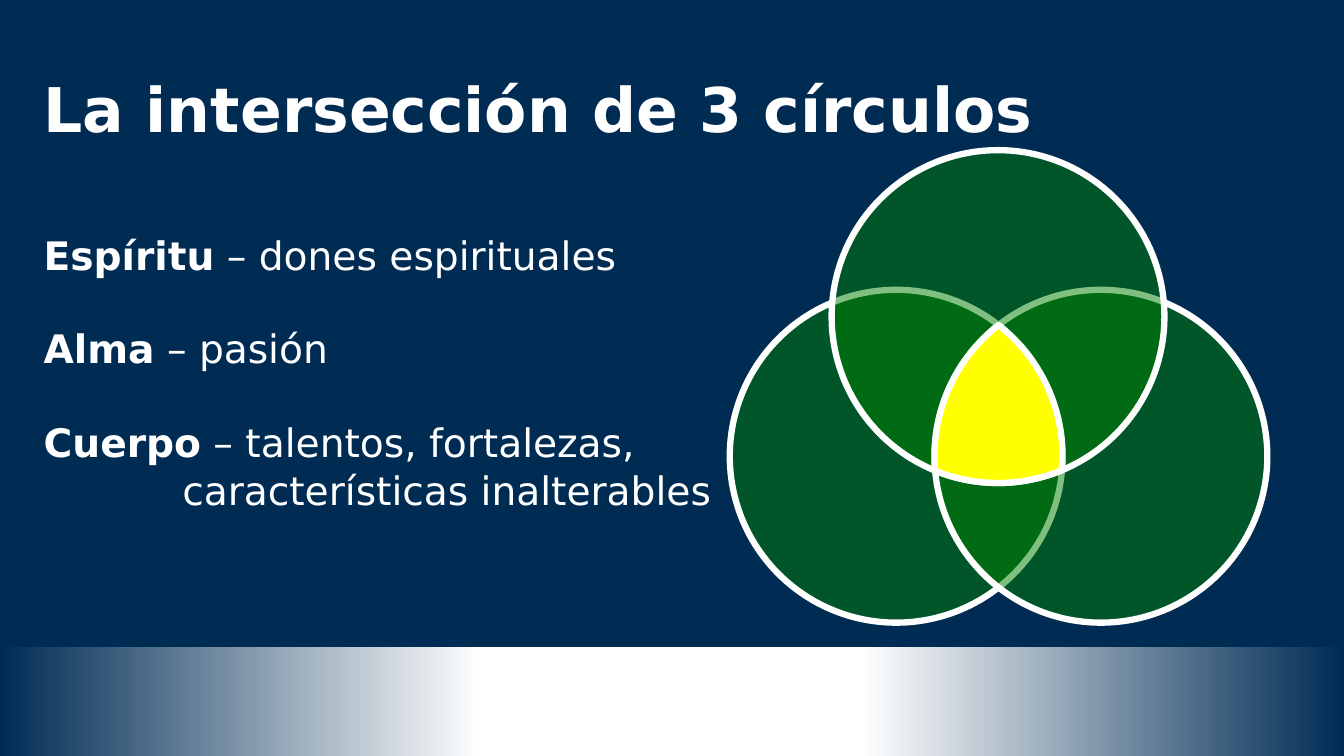
from math import atan2, cos, dist, remainder, sin, sqrt, tau

from lxml.etree import SubElement
from pptx import Presentation
from pptx.dml.color import RGBColor
from pptx.enum.shapes import MSO_SHAPE as Shape
from pptx.enum.text import MSO_ANCHOR as Anchor, MSO_AUTO_SIZE as AutoSize, PP_ALIGN as Align
from pptx.oxml.ns import qn
from pptx.util import Pt

PX = 9525  # EMU per pixel at 96 px to the inch
FONT = "DejaVu Sans"
COLORS = {"navy": "002C54", "white": "FFFFFF", "green": "008000", "yellow": "FFFF00"}
TOPICS = [
    ("Espíritu", " – dones espirituales"),
    ("Alma", " – pasión"),
    ("Cuerpo", " – talentos, fortalezas, características inalterables"),
]


def color(name):
    return RGBColor.from_string(COLORS[name])


def place(shape, box):
    shape.left, shape.top, shape.width, shape.height = (n * PX for n in box)


def add_span(para, text, size, bold):
    span = para.add_run()
    span.text = text
    span.font.name, span.font.size, span.font.bold = FONT, Pt(size), bold
    span.font.color.rgb = color("white")


def paint(shape, fill):
    """Flat fill with the thick white outline of the diagram."""
    shape.shadow.inherit = False
    shape.fill.solid()
    shape.fill.fore_color.rgb = color(fill)
    shape.line.color.rgb = color("white")
    shape.line.width = Pt(4.5)


# Gradient band along the bottom edge
def add_band(page, box):
    band = page.shapes.add_shape(Shape.RECTANGLE, *(n * PX for n in box))
    band.shadow.inherit = False
    band.line.fill.background()
    band.fill.gradient()
    band.fill.gradient_angle = 0
    stops = band._element.spPr.find(qn("a:gradFill")).find(qn("a:gsLst"))
    for stop in list(stops):
        stops.remove(stop)
    for percent, name in [(0, "navy"), (36, "white"), (64, "white"), (100, "navy")]:
        stop = SubElement(stops, qn("a:gs"), pos=str(percent * 1000))
        SubElement(stop, qn("a:srgbClr"), val=COLORS[name])


# Heading
def fill_title(page, box):
    title = page.shapes.title
    place(title, box)
    frame = title.text_frame
    frame.auto_size = AutoSize.NONE
    frame.vertical_anchor = Anchor.MIDDLE
    para = frame.paragraphs[0]
    para.alignment = Align.LEFT
    para.line_spacing = 0.9
    add_span(para, "La intersección de 3 círculos", 44, True)


# Topic list with hanging indents
def fill_topics(page, box):
    body = page.placeholders[1]
    place(body, box)
    frame = body.text_frame
    frame.word_wrap = True
    frame.auto_size = AutoSize.NONE
    frame.vertical_anchor = Anchor.TOP
    hang = 132 * PX
    for index, (term, meaning) in enumerate(TOPICS):
        para = frame.add_paragraph() if index else frame.paragraphs[0]
        props = para._p.get_or_add_pPr()
        props.set("marL", str(hang))
        props.set("indent", str(-hang))
        SubElement(props, qn("a:buNone"))
        para.alignment = Align.LEFT
        para.space_before = Pt(33.5 if index else 0)
        add_span(para, term, 28, True)
        add_span(para, meaning, 28, False)


def inner_crossing(a, b, other, radius):
    """The point where circles a and b meet that lies nearer to the other centre."""
    (ax, ay), (bx, by) = a, b
    gap = dist(a, b)
    reach = sqrt(radius ** 2 - (gap / 2) ** 2) / gap
    points = [((ax + bx) / 2 + side * reach * (ay - by),
               (ay + by) / 2 + side * reach * (bx - ax)) for side in (-1, 1)]
    return min(points, key=lambda point: dist(point, other))


def arc(center, start, end, radius, steps=32):
    cx, cy = center
    first = atan2(start[1] - cy, start[0] - cx)
    sweep = remainder(atan2(end[1] - cy, end[0] - cx) - first, tau)
    angles = [first + sweep * step / steps for step in range(steps)]
    return [(cx + radius * cos(angle), cy + radius * sin(angle)) for angle in angles]


# Three overlapping circles and their common core
def add_venn(page, box):
    left, top, width, height = box
    size = 317
    radius = size / 2
    lower = top + height - size
    corners = [(left, lower), (left + width - size, lower),
               (left + (width - size) // 2, top)]
    venn = page.shapes.add_group_shape()
    for x, y in corners:
        circle = venn.shapes.add_shape(Shape.OVAL, x * PX, y * PX, size * PX, size * PX)
        paint(circle, "green")
        tint = circle._element.spPr.find(qn("a:solidFill"))[0]
        SubElement(tint, qn("a:alpha"), val="50000")

    centers = [(x + radius, y + radius) for x, y in corners]
    tips = [inner_crossing(centers[i - 2], centers[i - 1], centers[i], radius)
            for i in range(3)]
    outline = []
    for i, center in enumerate(centers):
        outline += arc(center, tips[i - 2], tips[i - 1], radius)
    points = [(round(x * PX), round(y * PX)) for x, y in outline]
    builder = venn.shapes.build_freeform(*points[0])
    builder.add_line_segments(points[1:], close=True)
    paint(builder.convert_to_shape(), "yellow")


def build_page(deck):
    page = deck.slides.add_slide(deck.slide_layouts[1])
    page.background.fill.solid()
    page.background.fill.fore_color.rgb = color("navy")
    add_band(page, (0, 616, 1280, 104))
    fill_title(page, (32, 38, 1216, 139))
    fill_topics(page, (32, 215, 667, 281))
    add_venn(page, (695, 143, 512, 450))


def main():
    deck = Presentation()
    deck.slide_width, deck.slide_height = 1280 * PX, 720 * PX
    build_page(deck)
    deck.save("out.pptx")


if __name__ == "__main__":
    main()
